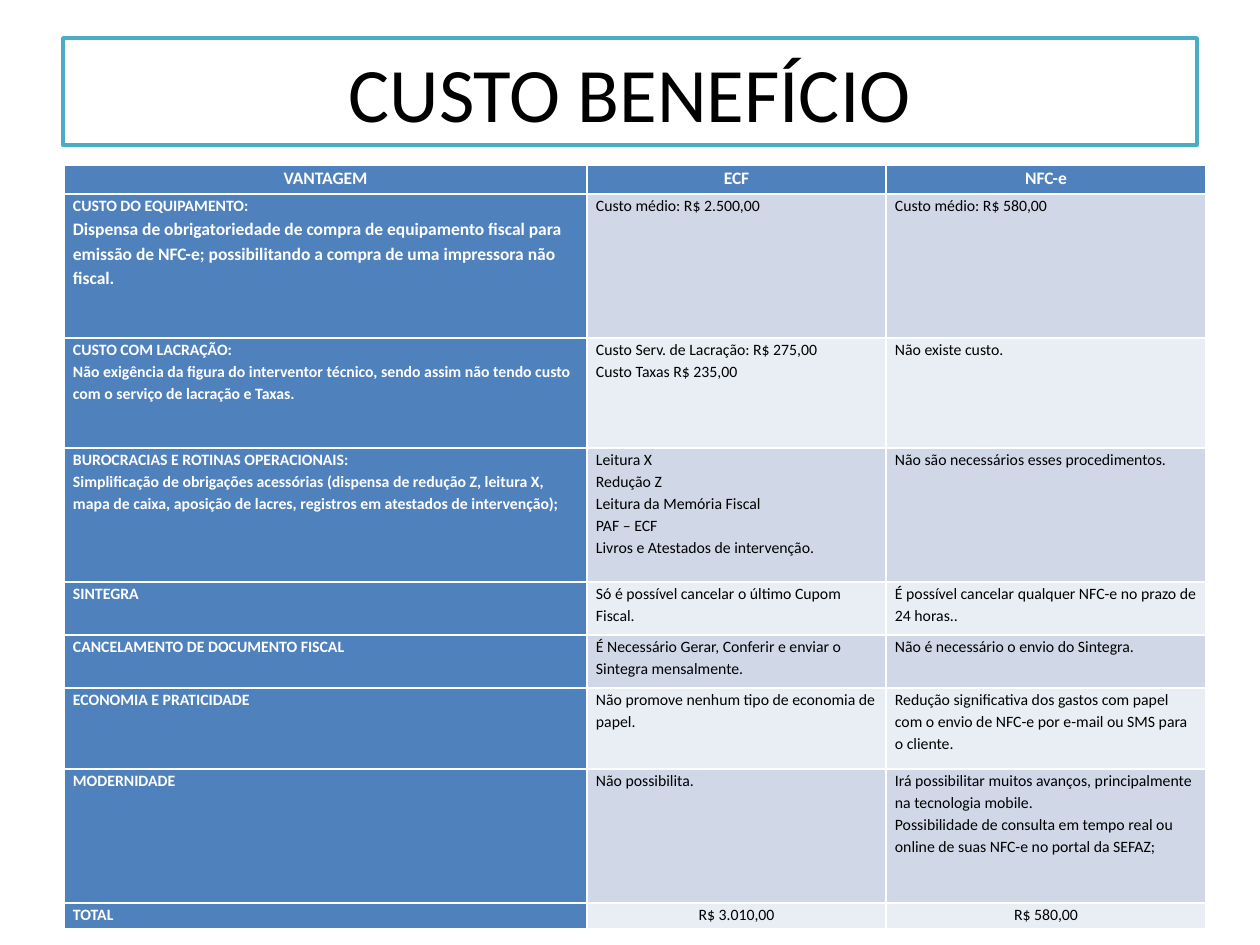
from copy import deepcopy

from pptx import Presentation
from pptx.dml.color import RGBColor as RGB
from pptx.enum.text import MSO_ANCHOR as ANCHOR, PP_ALIGN as ALIGN
from pptx.util import Emu, Pt

SCALE = 914400 / 126
COLORS = {
    "white": "FFFFFF", "black": "000000", "teal": "4BACC6",
    "blue": "4F81BD", "band": "D0D8E8", "pale": "E9EDF4",
}
COLS = [523, 299, 320]
ROWS = [29, 144, 110, 134, 53, 53, 81, 134, 26]
COSTS = [
    ["VANTAGEM", "ECF", "NFC-e"],
    ["CUSTO DO EQUIPAMENTO:\nDispensa de obrigatoriedade de compra de equipamento "
     "fiscal para emissão de NFC-e; possibilitando a compra de uma impressora não fiscal.",
     "Custo médio: R$ 2.500,00", "Custo médio: R$ 580,00"],
    ["CUSTO COM LACRAÇÃO:\nNão exigência da figura do interventor técnico, sendo "
     "assim não tendo custo com o serviço de lacração e Taxas.",
     "Custo Serv. de Lacração: R$ 275,00\nCusto Taxas R$ 235,00", "Não existe custo."],
    ["BUROCRACIAS E ROTINAS OPERACIONAIS:\nSimplificação de obrigações acessórias "
     "(dispensa de redução Z, leitura X, mapa de caixa, aposição de lacres, "
     "registros em atestados de intervenção);",
     "Leitura X\nRedução Z\nLeitura da Memória Fiscal\nPAF – ECF\n"
     "Livros e Atestados de intervenção.",
     "Não são necessários esses procedimentos."],
    ["SINTEGRA", "Só é possível cancelar o último Cupom Fiscal.",
     "É possível cancelar qualquer NFC-e no prazo de 24 horas.."],
    ["CANCELAMENTO DE DOCUMENTO FISCAL",
     "É Necessário Gerar, Conferir e enviar o Sintegra mensalmente.",
     "Não é necessário o envio do Sintegra."],
    ["ECONOMIA E PRATICIDADE", "Não promove nenhum tipo de economia de papel.",
     "Redução significativa dos gastos com papel com o envio de NFC-e por e-mail "
     "ou SMS para o cliente."],
    ["MODERNIDADE", "Não possibilita.",
     "Irá possibilitar muitos avanços, principalmente na tecnologia mobile.\n"
     "Possibilidade de consulta em tempo real ou online de suas NFC-e no portal da SEFAZ;"],
    ["TOTAL", "R$ 3.010,00", "R$ 580,00"],
]


def px(n):
    return Emu(round(n * SCALE))


def tint(name):
    return RGB.from_string(COLORS[name])


def paint(fill, name):
    fill.solid()
    fill.fore_color.rgb = tint(name)


def write(frame, text, font="Calibri", size=9, rest=None, color="black",
          bold=False, align=ALIGN.LEFT, space=None):
    """Fill one paragraph, with line breaks; rest is the size after the first line."""
    par = frame.paragraphs[0]
    par.alignment = align
    par.line_spacing = space
    for i, line in enumerate(text.split("\n")):
        if i:
            par.add_line_break()
            # The break keeps the size of the line it ends.
            par._p[-1].append(deepcopy(run._r.rPr))
        run = par.add_run()
        run.text = line
        run.font.name = font
        run.font.size = Pt(rest if i and rest else size)
        run.font.bold = bold
        run.font.color.rgb = tint(color)


class Deck:
    def __init__(self, wide, high):
        self.prs = Presentation()
        self.prs.slide_width, self.prs.slide_height = px(wide), px(high)
        self.slide = self.prs.slides.add_slide(self.prs.slide_layouts[5])

    def title(self, text, x, y, w, h):
        box = self.slide.shapes.title
        box.left, box.top, box.width, box.height = map(px, (x, y, w, h))
        paint(box.fill, "white")
        box.line.color.rgb = tint("teal")
        box.line.width = Pt(2)
        box.text_frame.vertical_anchor = ANCHOR.MIDDLE
        write(box.text_frame, text, size=44, align=ALIGN.CENTER)

    def table(self, data, x, y, cols, rows):
        """Draw the grid; white rules come from the default table style."""
        grid = self.slide.shapes.add_table(
            len(rows), len(cols), px(x), px(y), px(sum(cols)), px(sum(rows))).table
        for col, w in zip(grid.columns, cols):
            col.width = px(w)
        for row, h in zip(grid.rows, rows):
            row.height = px(h)
        last = len(rows) - 1
        for r, line in enumerate(data):
            for c, text in enumerate(line):
                self.cell(grid.cell(r, c), text, r, c, last)

    def cell(self, cell, text, r, c, last):
        head = r == 0 or c == 0
        mid = r == 0 or (r == last and c > 0)
        cell.margin_left = cell.margin_right = px(9)
        cell.margin_top = cell.margin_bottom = 0
        paint(cell.fill, "blue" if head else "band" if r % 2 else "pale")
        write(cell.text_frame, text, size=9 if r else 10, rest=10 if r == 1 else None,
              color="white" if head else "black", bold=head,
              align=ALIGN.CENTER if mid else ALIGN.LEFT, space=1.15)


def main():
    deck = Deck(1260, 945)
    deck.title("CUSTO BENEFÍCIO", 63, 38, 1134, 107)
    deck.table(COSTS, 64, 165, COLS, ROWS)
    deck.prs.save("out.pptx")


if __name__ == "__main__":
    main()
